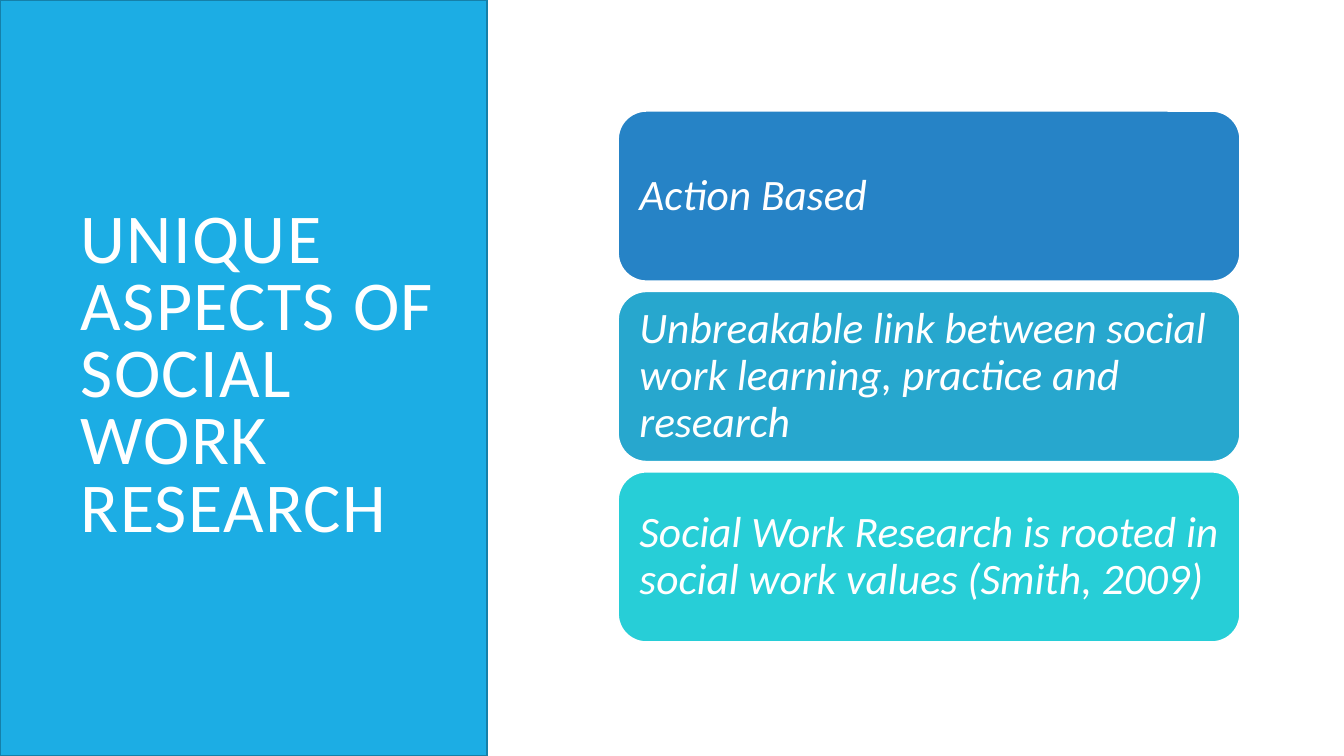
import pptx
import pptx.dml.color
import pptx.enum.shapes
import pptx.enum.text
import pptx.util

Inches = pptx.util.Inches
Pt = pptx.util.Pt

WHITE = "FFFFFF"
ASPECTS = [
    ("Action Based", "2683C6"),
    ("Unbreakable link between social work learning, practice and research", "27A7CE"),
    ("Social Work Research is rooted in social work values (Smith, 2009)", "27CED7"),
]


def color(hex_string):
    return pptx.dml.color.RGBColor.from_string(hex_string)


def add_panel(slide, kind, box, fill, line):
    shape = slide.shapes.add_shape(kind, *[Inches(length) for length in box])
    shape.shadow.inherit = False
    shape.fill.solid()
    shape.fill.fore_color.rgb = color(fill)
    shape.line.color.rgb = color(line)
    shape.line.width = Pt(1.25)
    return shape


def write_text(shape, text, size, line_spacing, space_after, italic=False):
    """Set one left-aligned, vertically centred white paragraph and return its run."""
    frame = shape.text_frame
    frame.text = text
    frame.word_wrap = True
    frame.auto_size = pptx.enum.text.MSO_AUTO_SIZE.NONE
    frame.vertical_anchor = pptx.enum.text.MSO_ANCHOR.MIDDLE
    paragraph = frame.paragraphs[0]
    paragraph.alignment = pptx.enum.text.PP_ALIGN.LEFT
    paragraph.line_spacing = line_spacing
    paragraph.space_after = Pt(space_after)
    run = paragraph.runs[0]
    run.font.name = "Calibri"
    run.font.size = Pt(size)
    run.font.italic = italic
    run.font.color.rgb = color(WHITE)
    return run


def add_title_panel(slide, left, top, width, height):
    panel = add_panel(slide, pptx.enum.shapes.MSO_SHAPE.RECTANGLE,
                      (left, top, width, height), "1CADE4", "1580A9")
    title = slide.shapes.title
    panel._element.addnext(title._element)  # title in front of the panel
    title.left, title.top = Inches(left + 0.7), Inches(top + 0.7)
    title.width, title.height = Inches(width - 1.09), Inches(height - 1.41)
    run = write_text(title, "UNIQUE ASPECTS OF SOCIAL WORK RESEARCH", 50, 0.8, 6)
    run._r.get_or_add_rPr().set("spc", "100")


def add_aspects(slide, left, top, width, height):
    gap = 0.1
    box_height = (height - gap * (len(ASPECTS) - 1)) / len(ASPECTS)
    for index, (text, fill) in enumerate(ASPECTS):
        box_top = top + index * (box_height + gap)
        shape = add_panel(slide, pptx.enum.shapes.MSO_SHAPE.ROUNDED_RECTANGLE,
                          (left, box_top, width, box_height), fill, WHITE)
        frame = shape.text_frame
        frame.margin_left = frame.margin_right = Inches(0.13)
        frame.margin_top = frame.margin_bottom = Inches(0.13)
        write_text(shape, text, 31, 0.9, 0, italic=True)


def main():
    presentation = pptx.Presentation()
    presentation.slide_width = Inches(13.33)
    presentation.slide_height = Inches(7.5)
    title_only = presentation.slide_layouts[5]
    slide = presentation.slides.add_slide(title_only)
    add_title_panel(slide, 0, 0, 4.83, 7.5)
    add_aspects(slide, 6.13, 1.1, 6.17, 5.27)
    presentation.save("out.pptx")


if __name__ == "__main__":
    main()
